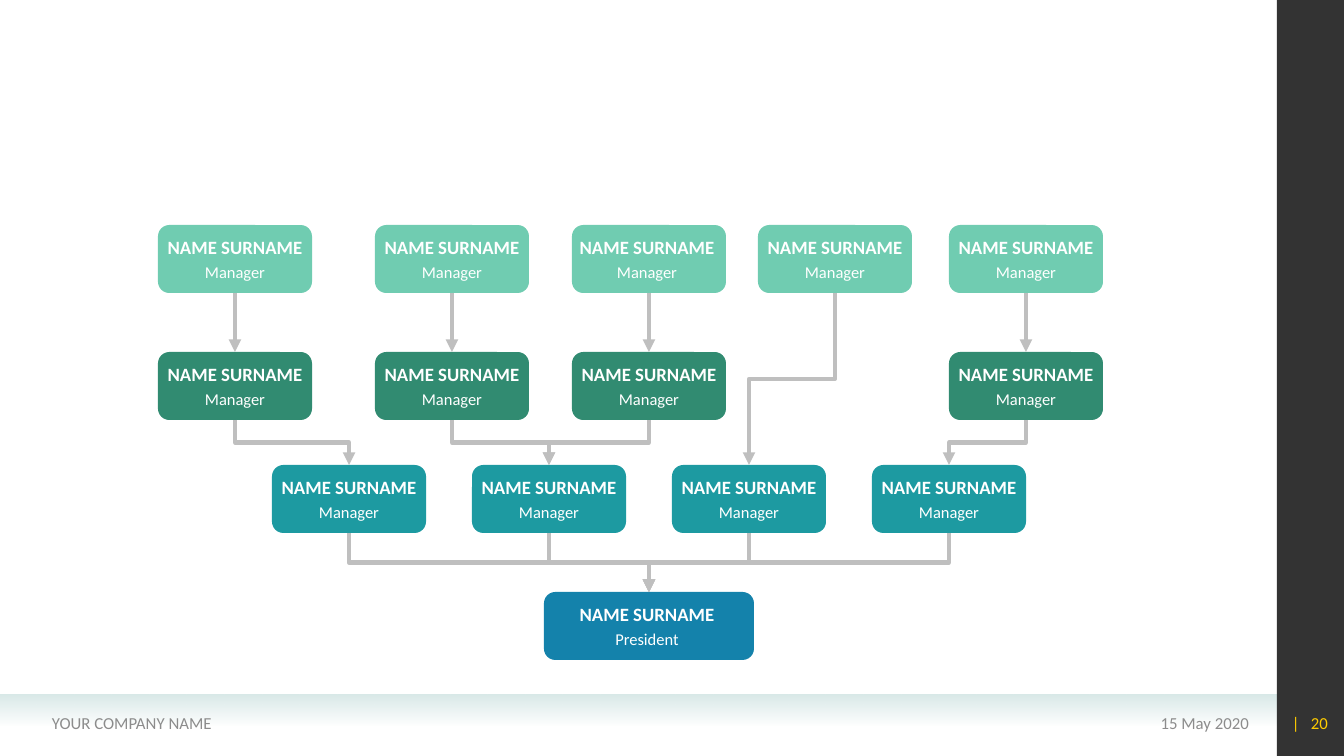
from lxml import etree
from pptx import Presentation
from pptx.dml.color import RGBColor
from pptx.enum.shapes import MSO_CONNECTOR, MSO_SHAPE
from pptx.enum.text import MSO_ANCHOR, PP_ALIGN
from pptx.oxml.ns import qn
from pptx.util import Emu, Pt

RECT, ROUNDED = MSO_SHAPE.RECTANGLE, MSO_SHAPE.ROUNDED_RECTANGLE
STRAIGHT, ELBOW = MSO_CONNECTOR.STRAIGHT, MSO_CONNECTOR.ELBOW
LEFT, CENTER, RIGHT = PP_ALIGN.LEFT, PP_ALIGN.CENTER, PP_ALIGN.RIGHT
MIDDLE = MSO_ANCHOR.MIDDLE
TOP_SIDE, BOTTOM_SIDE = 0, 2

SLIDE_W, SLIDE_H = 1344, 756
EMU_PER_PX = 12192000 / SLIDE_W
BOX_W, BOX_H = 154, 68

COLORS = {
    "mint": "70CCB1", "green": "318B71", "teal": "1D9AA1", "blue": "1482AB",
    "line": "BFBFBF", "band": "D9E9E8", "sidebar": "000000",
    "footer": "8C8C8C", "number": "FFCC00", "white": "FFFFFF",
}
NAME = {"size": Pt(13.4), "bold": True}
ROLE = {"size": Pt(11.8)}
FOOTER = {"size": Pt(12)}

# level: (fill, top, box centres)
LEVELS = {
    "upper": ("mint", 225, [235, 452, 649, 835, 1026]),
    "middle": ("green", 352, [235, 452, 649, 1026]),
    "lower": ("teal", 465, [349 + 200 * i for i in range(4)]),
    "president": ("blue", 592, [649]),
}
# (from level, to level): pairs of box positions
LINKS = {
    ("lower", "president"): [(0, 0), (1, 0), (2, 0), (3, 0)],
    ("middle", "lower"): [(1, 1), (2, 1), (0, 0), (3, 3)],
    ("upper", "lower"): [(3, 2)],
    ("upper", "middle"): [(0, 0), (1, 1), (2, 2), (4, 3)],
}


def px(n):
    return Emu(round(n * EMU_PER_PX))


def rgb(color):
    return RGBColor.from_string(COLORS[color])


def add_block(slide, kind, left, top, width, height, color):
    s = slide.shapes.add_shape(kind, px(left), px(top), px(width), px(height))
    s.shadow.inherit = False
    s.line.fill.background()
    s.fill.solid()
    s.fill.fore_color.rgb = rgb(color)
    return s


def set_alpha(color_el, percent):
    etree.SubElement(color_el, qn("a:alpha"), val=str(percent * 1000))


def add_run(p, text, color, fmt):
    r = p.add_run()
    r.text = text
    r.font.name = "Calibri"
    r.font.color.rgb = rgb(color)
    for key, value in fmt.items():
        setattr(r.font, key, value)
    return r


def add_label(slide, box, text, color, fmt, align, wrap=True, insets=(10, 5)):
    """Add one line of text, centred vertically; return its paragraph."""
    tf = slide.shapes.add_textbox(*map(px, box)).text_frame
    tf.word_wrap = wrap
    tf.vertical_anchor = MIDDLE
    tf.margin_left = tf.margin_right = px(insets[0])
    tf.margin_top = tf.margin_bottom = px(insets[1])
    p = tf.paragraphs[0]
    p.alignment = align
    add_run(p, text, color, fmt)
    return p


def add_person(slide, center, top, role):
    add_label(slide, (center - 82, top + 6, 164, 33), "NAME SURNAME",
              "white", NAME, CENTER, wrap=False)
    add_label(slide, (center - 37, top + 35, 74, 24), role,
              "white", ROLE, CENTER, wrap=False, insets=(4, 2))


def add_arrow(slide, start, end):
    """Join the bottom of one box to the top of a lower one."""
    x1, y1 = start.left + start.width // 2, start.top + start.height
    x2, y2 = end.left + end.width // 2, end.top
    dx, dy = abs(x2 - x1), y2 - y1
    bent = dx > px(1)
    c = slide.shapes.add_connector(ELBOW if bent else STRAIGHT, x1, y1, x2, y2)
    c.begin_connect(start, BOTTOM_SIDE)
    c.end_connect(end, TOP_SIDE)
    if bent:
        # A quarter turn makes the elbow leave and arrive vertically.
        c.left, c.top = Emu((x1 + x2 - dy) // 2), Emu((y1 + y2 - dx) // 2)
        c.width, c.height = Emu(dy), Emu(dx)
        c.rotation = 270 if x2 > x1 else 90
        c._element.spPr.xfrm.set("flipH", "1" if x2 > x1 else "0")
    c.line.color.rgb = rgb("line")
    c.line.width = Pt(3)
    etree.SubElement(c.line._get_or_add_ln(), qn("a:tailEnd"), type="triangle")
    etree.SubElement(c._element.spPr, qn("a:effectLst"))


def add_frame(slide):
    """Add the footer band, the sidebar and their texts."""
    band = add_block(slide, RECT, 0, 695, 1277, 31, "band")
    band.fill.gradient()
    band.fill.gradient_angle = 270
    for stop in band.fill.gradient_stops:
        stop.color.rgb = rgb("band")
    set_alpha(list(band._element.spPr.iter(qn("a:srgbClr")))[-1], 0)

    sidebar = add_block(slide, RECT, 1277, 0, 67, SLIDE_H, "sidebar")
    set_alpha(next(sidebar._element.spPr.iter(qn("a:srgbClr"))), 80)

    add_label(slide, (917, 703, 342, 40), "15 May 2020", "footer", FOOTER, RIGHT)
    add_label(slide, (42, 703, 494, 40), "YOUR COMPANY NAME", "footer", FOOTER, LEFT)
    p = add_label(slide, (1270, 703, 68, 40), "| ", "number", FOOTER, RIGHT)
    p.runs[0].font._element.set("spc", "270")
    add_run(p, "20", "number", FOOTER)


def main():
    prs = Presentation()
    prs.slide_width, prs.slide_height = px(SLIDE_W), px(SLIDE_H)
    slide = prs.slides.add_slide(prs.slide_layouts[6])
    add_frame(slide)

    boxes = {}
    for level, (color, top, centers) in LEVELS.items():
        width = 210 if level == "president" else BOX_W
        boxes[level] = [add_block(slide, ROUNDED, x - width // 2, top, width, BOX_H, color)
                        for x in centers]

    for (upper, lower), pairs in LINKS.items():
        for i, j in pairs:
            add_arrow(slide, boxes[upper][i], boxes[lower][j])

    for level, (_, top, centers) in LEVELS.items():
        role = "President" if level == "president" else "Manager"
        for x in centers:
            shift = 2 if x == 649 and level != "middle" else 0
            add_person(slide, x - shift, top, role)

    prs.save("out.pptx")


if __name__ == "__main__":
    main()
